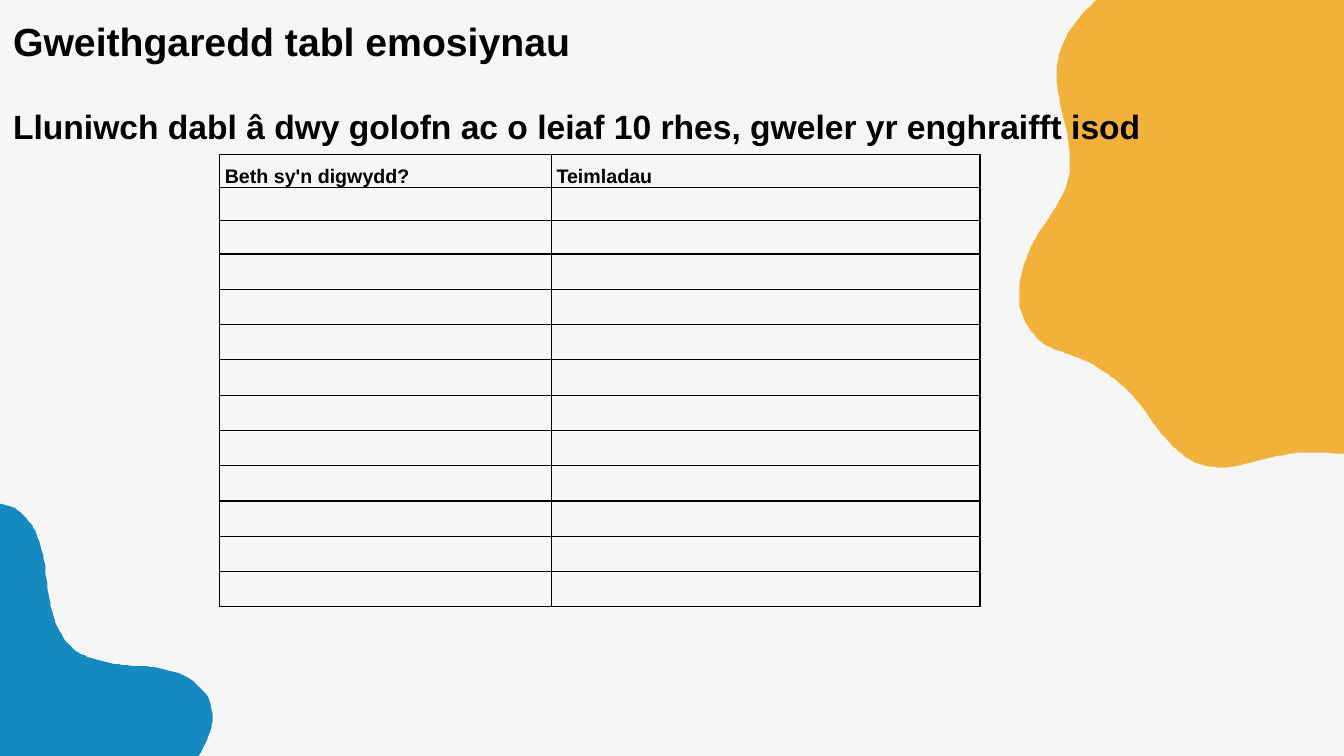
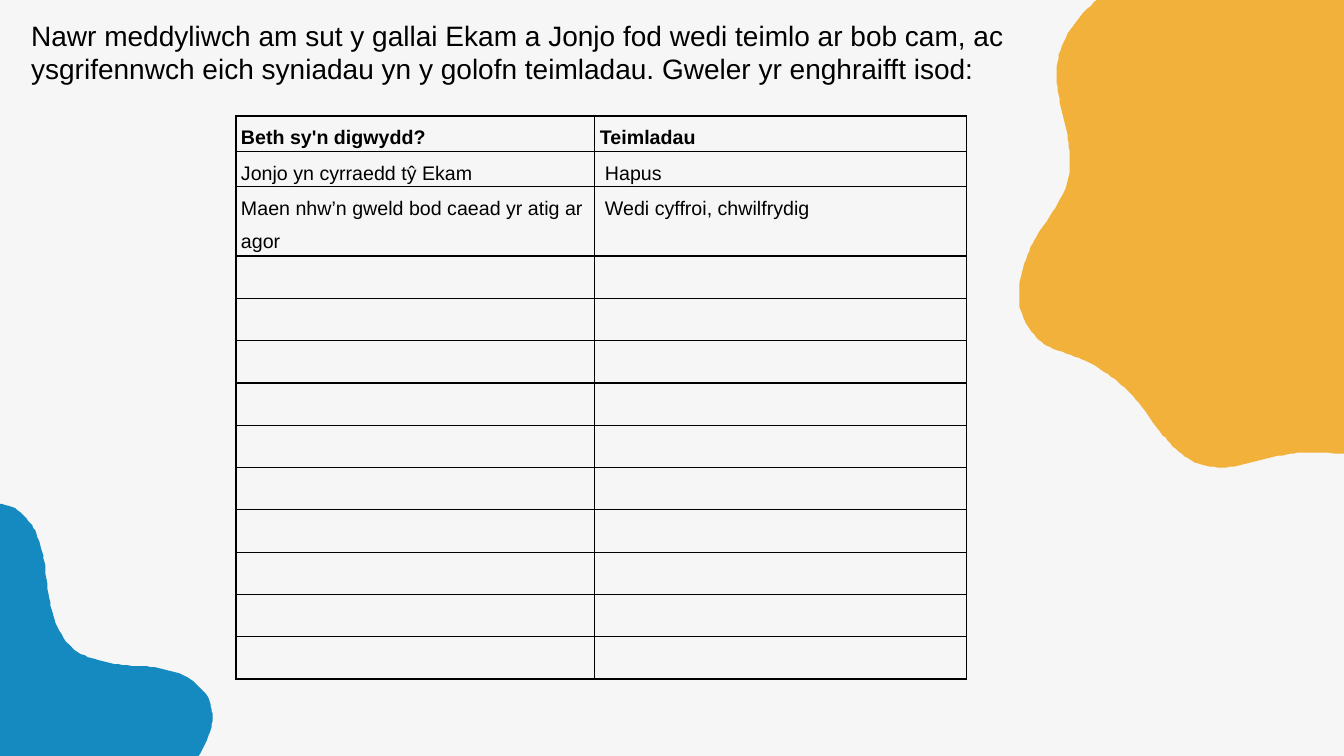
from lxml import etree
from pptx import Presentation
from pptx.dml.color import RGBColor
from pptx.enum.text import MSO_ANCHOR, MSO_AUTO_SIZE, PP_ALIGN
from pptx.oxml.ns import qn
from pptx.util import Pt

PX = 9144  # EMU; 100 px to the inch
PAGE_WIDTH, PAGE_HEIGHT = 1333, 750
TITLE_ONLY, BLANK = 5, 6
TOP, LEFT = MSO_ANCHOR.TOP, PP_ALIGN.LEFT
NO_AUTOFIT = MSO_AUTO_SIZE.NONE
FONT = "Arial"
COLORS = {"paper": "F6F6F6", "orange": "F1B13B", "blue": "158AC0", "ink": "000000"}

ORANGE_EDGE = [
    (1088, 0), (1074, 13), (1062, 29), (1053, 46), (1049, 62), (1048, 78),
    (1050, 94), (1053, 110), (1057, 126), (1060, 142), (1061, 159), (1060, 175),
    (1055, 191), (1047, 206), (1035, 224), (1026, 238), (1019, 253), (1014, 269),
    (1011, 285), (1011, 301), (1014, 312), (1019, 323), (1028, 335), (1038, 343),
    (1050, 348), (1066, 354), (1081, 360), (1095, 369), (1109, 379), (1121, 390),
    (1132, 403), (1148, 425), (1158, 437), (1169, 448), (1182, 457), (1196, 462),
    (1212, 464), (1228, 462), (1244, 458), (1260, 454), (1276, 451), (1291, 449),
    (1311, 449), (1333, 450),
]
BLUE_EDGE = [
    (0, 500), (12, 503), (22, 510), (30, 519), (36, 529), (41, 545), (44, 557),
    (46, 574), (49, 594), (52, 607), (57, 622), (65, 636), (77, 647), (91, 653),
    (106, 657), (122, 660), (142, 661), (158, 663), (174, 667), (189, 674),
    (200, 684), (207, 693), (210, 704), (211, 712), (209, 724), (205, 735),
    (197, 750),
]
HEADINGS = ("Beth sy'n digwydd?", "Teimladau")
EXAMPLES = [
    ("Jonjo yn cyrraedd tŷ Ekam", "Hapus"),
    ("Maen nhw’n gweld bod caead yr atig ar agor", "Wedi cyffroi, chwilfrydig"),
]


def px(*lengths):
    return [length * PX for length in lengths]


def rgb(name):
    return RGBColor.from_string(COLORS[name])


def smooth_curve(knots, steps=4):
    """Return points of a Catmull-Rom curve through the knots."""
    padded = [knots[0], *knots, knots[-1]]
    points = [knots[0]]
    for before, start, end, after in zip(padded, padded[1:], padded[2:], padded[3:]):
        for step in range(1, steps + 1):
            t = step / steps
            points.append(tuple(
                0.5 * (2 * b + (c - a) * t + (2 * a - 5 * b + 4 * c - d) * t ** 2
                       + (3 * b - a - 3 * c + d) * t ** 3)
                for a, b, c, d in zip(before, start, end, after)))
    return points


def add_blob(page, edge, corner, color):
    start, *rest = smooth_curve(edge)
    builder = page.shapes.build_freeform(*start, scale=PX)
    builder.add_line_segments([*rest, corner], close=True)
    blob = builder.convert_to_shape()
    blob.shadow.inherit = False
    blob.fill.solid()
    blob.fill.fore_color.rgb = rgb(color)
    blob.line.fill.background()
    return blob


def decorate_master(deck, page):
    """Draw the blobs through a page, then hand them to the slide master."""
    master = deck.slide_master
    master.background.fill.solid()
    master.background.fill.fore_color.rgb = rgb("paper")
    for edge, corner, color in ((ORANGE_EDGE, (PAGE_WIDTH, 0), "orange"),
                                (BLUE_EDGE, (0, PAGE_HEIGHT), "blue")):
        blob = add_blob(page, edge, corner, color)
        master.shapes.element.insert(2, blob.element)


def write(paragraph, text, size, bold=False, **layout):
    """Fill a paragraph; layout sets paragraph attributes such as line_spacing."""
    for name, value in layout.items():
        setattr(paragraph, name, value)
    span = paragraph.add_run()
    span.text = text
    span.font.name = FONT
    span.font.size = Pt(size)
    span.font.bold = bold
    span.font.color.rgb = rgb("ink")


def set_title(page, heading, instruction):
    title = page.shapes.title
    title.left, title.top, title.width, title.height = px(13, 13, 1244, 140)
    frame = title.text_frame
    frame.auto_size = NO_AUTOFIT
    frame.word_wrap = True
    frame.vertical_anchor = TOP
    frame.margin_left = frame.margin_right = frame.margin_bottom = 0
    frame.margin_top = 4 * PX
    write(frame.paragraphs[0], heading, 28, bold=True, alignment=LEFT)
    write(frame.add_paragraph(), instruction, 24, bold=True, alignment=LEFT,
          space_before=Pt(30))


def add_text(page, text, place, size):
    box = page.shapes.add_textbox(*px(*place))
    box.text_frame.word_wrap = True
    write(box.text_frame.paragraphs[0], text, size)


def set_borders(cell):
    properties = cell._tc.get_or_add_tcPr()
    for side in ("lnL", "lnR", "lnT", "lnB"):
        line = etree.SubElement(properties, qn(f"a:{side}"), w=str(Pt(1)))
        fill = etree.SubElement(line, qn("a:solidFill"))
        etree.SubElement(fill, qn("a:srgbClr"), val=COLORS["ink"])


def add_feelings_table(page, left, top, widths, heights, examples=()):
    """Add the two-column table; rows beyond the examples stay empty."""
    frame = page.shapes.add_table(
        len(heights), len(widths), *px(left, top, sum(widths), sum(heights)))
    table = frame.table
    table.first_row = table.horz_banding = False
    for column, width in zip(table.columns, widths):
        column.width = width * PX
    for row, height in zip(table.rows, heights):
        row.height = height * PX
    for cell in table.iter_cells():
        set_borders(cell)
        cell.fill.background()
        cell.margin_left = cell.margin_right = 5 * PX
        cell.margin_top = cell.margin_bottom = 0
    for row_index, texts in enumerate([HEADINGS, *examples]):
        is_heading = row_index == 0
        for column_index, text in enumerate(texts):
            cell = table.cell(row_index, column_index)
            if column_index and not is_heading:
                cell.margin_left = 10 * PX
            write(cell.text_frame.paragraphs[0], text, 14, bold=is_heading,
                  line_spacing=1.5)


def main():
    deck = Presentation()
    deck.slide_width, deck.slide_height = px(PAGE_WIDTH, PAGE_HEIGHT)

    activity = deck.slides.add_slide(deck.slide_layouts[TITLE_ONLY])
    decorate_master(deck, activity)
    set_title(activity, "Gweithgaredd tabl emosiynau",
              "Lluniwch dabl â dwy golofn ac o leiaf 10 rhes, gweler yr enghraifft isod")
    add_feelings_table(activity, 218, 153, (329, 425), [33] * 3 + [35] * 10)

    example = deck.slides.add_slide(deck.slide_layouts[BLANK])
    add_feelings_table(example, 234, 115, (356, 369), [35, 35, 69] + [42] * 10, EXAMPLES)
    add_text(example,
             "Nawr meddyliwch am sut y gallai Ekam a Jonjo fod wedi teimlo ar bob cam, "
             "ac ysgrifennwch eich syniadau yn y golofn teimladau. "
             "Gweler yr enghraifft isod:",
             (21, 13, 1008, 77), 20)

    deck.save("out.pptx")


if __name__ == "__main__":
    main()
